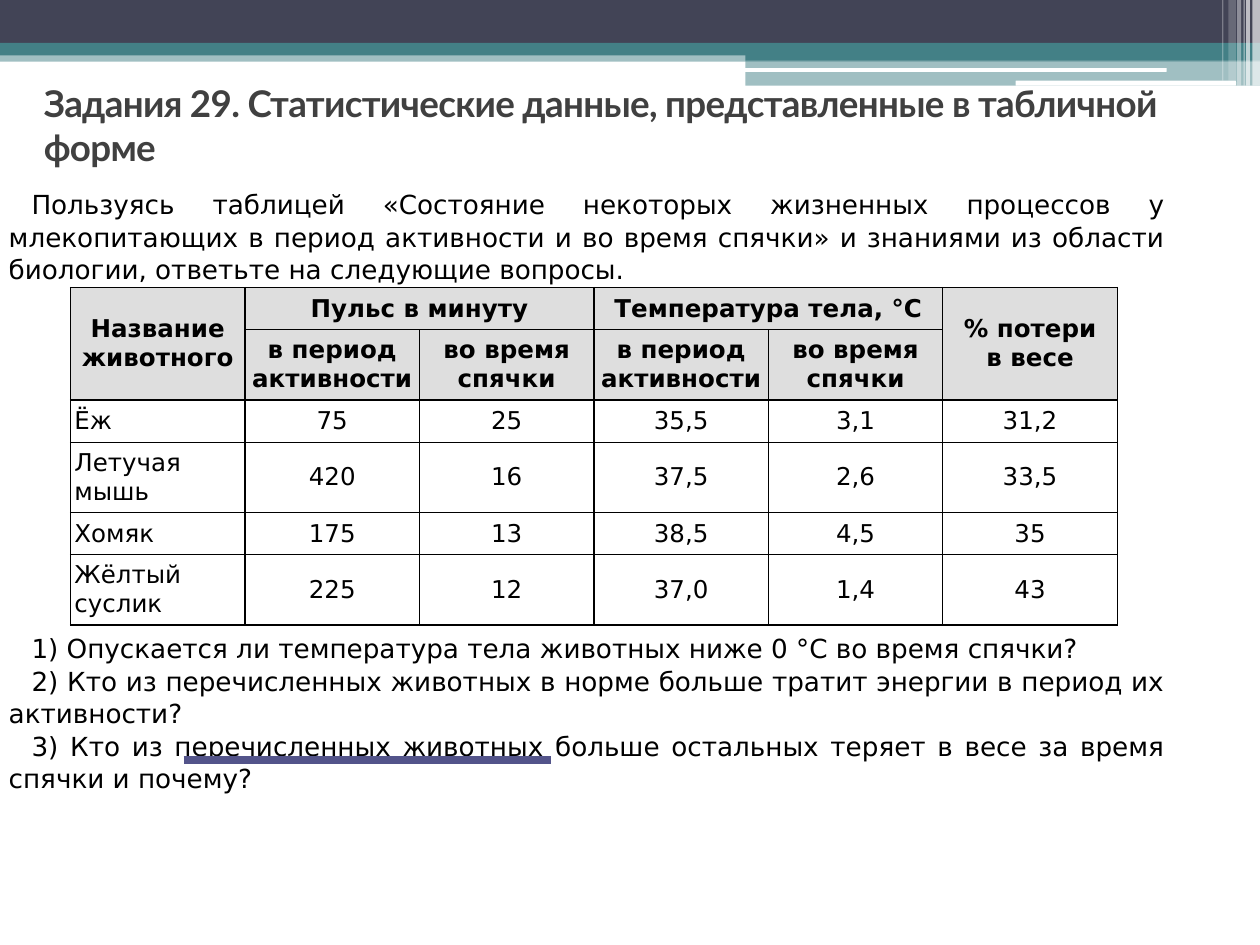
from typing import NamedTuple

from lxml import etree
from pptx import Presentation
from pptx.dml.color import RGBColor
from pptx.enum.shapes import MSO_CONNECTOR, MSO_SHAPE
from pptx.enum.text import MSO_ANCHOR, PP_ALIGN
from pptx.oxml.ns import qn
from pptx.util import Pt

RECTANGLE = MSO_SHAPE.RECTANGLE
ROUNDED = MSO_SHAPE.ROUNDED_RECTANGLE
STRAIGHT = MSO_CONNECTOR.STRAIGHT
MIDDLE = MSO_ANCHOR.MIDDLE
LEFT, CENTER, JUSTIFY = PP_ALIGN.LEFT, PP_ALIGN.CENTER, PP_ALIGN.JUSTIFY

WHITE = RGBColor(0xFF, 0xFF, 0xFF)
BLACK = RGBColor(0x00, 0x00, 0x00)
SLATE = RGBColor(0x42, 0x44, 0x56)
TEAL = RGBColor(0x43, 0x80, 0x86)
VIOLET = RGBColor(0x53, 0x54, 0x8A)
TITLE_GRAY = RGBColor(0x40, 0x40, 0x40)
HEADER_GRAY = RGBColor(0xDE, 0xDE, 0xDE)

BODY_FONT = "DejaVu Sans"
TITLE_FONT = "Lato"
COLUMN_WIDTH = 99.7
ROW_HEIGHTS = [24.1, 40.2] * 3
HEADER_ROWS = 2
TABLE_GAP = 198  # room for the table between the two parts of the text


class Band(NamedTuple):
    left: float
    top: float
    width: float
    height: float
    color: RGBColor
    opacity: int = 100
    preset: MSO_SHAPE = RECTANGLE


class Span(NamedTuple):
    first: tuple[int, int]
    last: tuple[int, int]


BANDS = [
    Band(0, 28.8, 720, 6.5, TEAL, 50),
    Band(0, 0, 720, 24.5, SLATE),
    Band(0, 24.5, 720, 7.2, TEAL),
    Band(426, 28, 294, 6.6, TEAL),
    Band(426, 34.6, 294, 14.4, TEAL, 50),
    Band(425.5, 38.9, 241.2, 2.2, WHITE, 100, ROUNDED),
    Band(580.3, 46.1, 126, 2.9, WHITE, 100, ROUNDED),
    # Vertical stripes at the right edge
    Band(715.7, 0, 4.3, 49, WHITE, 65),
    Band(712.1, 0, 2.2, 49, WHITE, 65),
    Band(710.6, 0, 0.72, 49, WHITE, 60),
    Band(707, 0, 2.2, 49, WHITE, 40),
    Band(702, 0, 4.3, 46.1, WHITE, 20),
    Band(698.4, 0, 0.72, 46.1, WHITE, 30),
]

TITLE = "Задания 29. Статистические данные, представленные в табличной форме"
INTRODUCTION = (
    "Пользуясь таблицей «Состояние некоторых жизненных процессов у "
    "млекопитающих в период активности и во время спячки» и знаниями из "
    "области биологии, ответьте на следующие вопросы."
)
QUESTIONS = [
    "1) Опускается ли температура тела животных ниже 0 °C во время спячки?",
    "2) Кто из перечисленных животных в норме больше тратит энергии в период их активности?",
    "3) Кто из перечисленных животных больше остальных теряет в весе за время спячки и почему?",
]

# A vertical tab becomes a line break inside the cell
PERIODS = ["в период\vактивности", "во время\vспячки"]
ROWS = [
    ["Название\vживотного", "Пульс в минуту", "", "Температура тела, °С", "", "% потери\vв весе"],
    ["", *PERIODS, *PERIODS, ""],
    ["Ёж", "75", "25", "35,5", "3,1", "31,2"],
    ["Летучая мышь", "420", "16", "37,5", "2,6", "33,5"],
    ["Хомяк", "175", "13", "38,5", "4,5", "35"],
    ["Жёлтый суслик", "225", "12", "37,0", "1,4", "43"],
]
SPANS = [
    Span((0, 0), (1, 0)),
    Span((0, 1), (0, 2)),
    Span((0, 3), (0, 4)),
    Span((0, 5), (1, 5)),
]


def draw_band(slide, band: Band) -> None:
    shape = slide.shapes.add_shape(
        band.preset, Pt(band.left), Pt(band.top), Pt(band.width), Pt(band.height)
    )
    shape.shadow.inherit = False
    shape.line.fill.background()
    shape.fill.solid()
    shape.fill.fore_color.rgb = band.color
    if band.opacity < 100:
        color = shape.fill._xPr.find(qn("a:solidFill"))[0]
        etree.SubElement(color, qn("a:alpha"), val=str(band.opacity * 1000))


def format_runs(paragraph, font: str, size: float, color: RGBColor, bold: bool) -> None:
    for run in paragraph.runs:
        run.font.name = font
        run.font.size = Pt(size)
        run.font.color.rgb = color
        run.font.bold = bold


def add_text_box(slide, left: float, top: float, width: float, height: float):
    text_frame = slide.shapes.add_textbox(
        Pt(left), Pt(top), Pt(width), Pt(height)
    ).text_frame
    text_frame.word_wrap = True
    text_frame.vertical_anchor = MIDDLE
    return text_frame


def draw_title(slide) -> None:
    text_frame = add_text_box(slide, 18, 37.4, 700, 67.7)
    text_frame.text = TITLE
    paragraph = text_frame.paragraphs[0]
    format_runs(paragraph, TITLE_FONT, 21, TITLE_GRAY, True)
    paragraph.runs[0].font._element.set("spc", "-40")


def draw_body(slide) -> None:
    text_frame = add_text_box(slide, 0, 105.1, 671, 350.6)
    text_frame.margin_left = text_frame.margin_right = Pt(5)
    text_frame.margin_top = text_frame.margin_bottom = Pt(2.9)
    text_frame.text = "\n".join([INTRODUCTION, *QUESTIONS])
    for paragraph in text_frame.paragraphs:
        paragraph.alignment = JUSTIFY
        paragraph.line_spacing = 1.03
        paragraph._p.get_or_add_pPr().set("indent", str(Pt(13)))
        format_runs(paragraph, BODY_FONT, 15, BLACK, False)
    text_frame.paragraphs[1].space_before = Pt(TABLE_GAP)


def add_borders(cell) -> None:
    properties = cell._tc.get_or_add_tcPr()
    for side in ("lnL", "lnR", "lnT", "lnB"):
        line = etree.SubElement(properties, qn(f"a:{side}"), w=str(Pt(0.75)))
        fill = etree.SubElement(line, qn("a:solidFill"))
        etree.SubElement(fill, qn("a:srgbClr"), val=str(BLACK))


def format_cell(cell, text: str, is_header: bool, alignment: PP_ALIGN) -> None:
    add_borders(cell)
    if is_header:
        cell.fill.solid()
        cell.fill.fore_color.rgb = HEADER_GRAY
    else:
        cell.fill.background()
    cell.vertical_anchor = MIDDLE
    cell.margin_left = cell.margin_right = Pt(2.2)
    cell.margin_top = cell.margin_bottom = Pt(2.2)
    cell.text_frame.text = text
    paragraph = cell.text_frame.paragraphs[0]
    paragraph.alignment = alignment
    format_runs(paragraph, BODY_FONT, 14, BLACK, is_header)


def draw_table(slide) -> None:
    column_count = len(ROWS[0])
    table = slide.shapes.add_table(
        len(ROWS), column_count, Pt(40.3), Pt(164.3),
        Pt(COLUMN_WIDTH * column_count), Pt(sum(ROW_HEIGHTS)),
    ).table
    table.first_row = table.horz_banding = False
    for column in table.columns:
        column.width = Pt(COLUMN_WIDTH)
    for row, height in zip(table.rows, ROW_HEIGHTS):
        row.height = Pt(height)
    for row_index, texts in enumerate(ROWS):
        is_header = row_index < HEADER_ROWS
        for column_index, text in enumerate(texts):
            alignment = CENTER if is_header or column_index else LEFT
            format_cell(table.cell(row_index, column_index), text, is_header, alignment)
    for span in SPANS:
        table.cell(*span.first).merge(table.cell(*span.last))


def draw_underline(slide) -> None:
    line = slide.shapes.add_connector(STRAIGHT, Pt(105), Pt(434.2), Pt(314.6), Pt(434.2))
    line.line.color.rgb = VIOLET
    line.line.width = Pt(4.5)
    etree.SubElement(line._element.spPr, qn("a:effectLst"))


def main() -> None:
    presentation = Presentation()
    presentation.slide_width, presentation.slide_height = Pt(720), Pt(540)
    slide = presentation.slides.add_slide(presentation.slide_layouts[6])

    for band in BANDS:
        draw_band(slide, band)
    draw_title(slide)
    draw_body(slide)
    draw_table(slide)
    draw_underline(slide)
    presentation.save("out.pptx")


if __name__ == "__main__":
    main()
